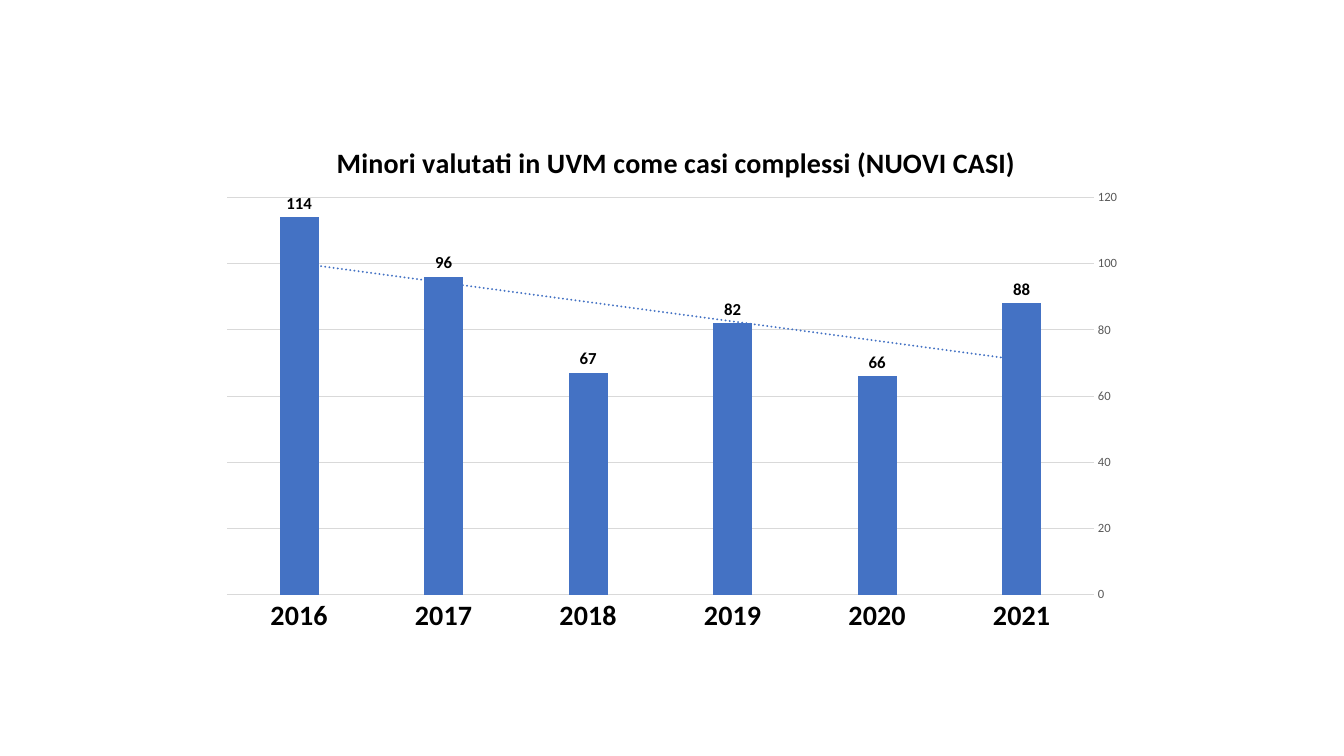
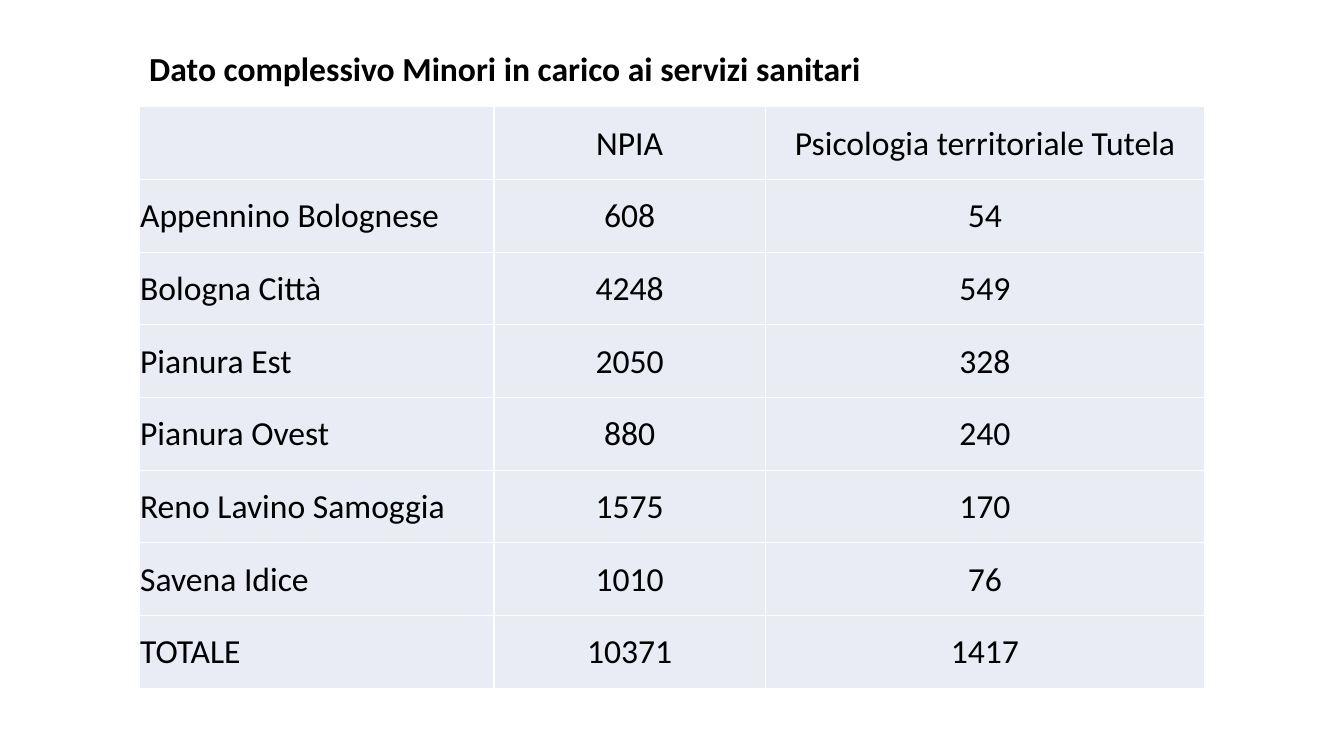
from dataclasses import dataclass
from typing import Any, NamedTuple

import pptx
import pptx.chart.data
import pptx.dml.color
import pptx.enum.chart
import pptx.enum.text
import pptx.oxml
import pptx.oxml.ns
import pptx.util
from pptx.dml.color import RGBColor
from pptx.util import Inches

FONT_NAME = "Calibri"
BLACK = RGBColor(0x00, 0x00, 0x00)
WHITE = RGBColor(0xFF, 0xFF, 0xFF)
GRAY = RGBColor(0x59, 0x59, 0x59)
LIGHT_GRAY = RGBColor(0xD9, 0xD9, 0xD9)
BLUE = RGBColor(0x44, 0x72, 0xC4)
PALE_BLUE = RGBColor(0xE9, 0xEB, 0xF5)

TITLE_ONLY_LAYOUT = 5
BLANK_LAYOUT = 6


class Box(NamedTuple):
    left: float
    top: float
    width: float
    height: float

    def lengths(self) -> list[int]:
        return [Inches(value) for value in self]


@dataclass(frozen=True)
class TextStyle:
    size: float
    bold: bool = False
    color: RGBColor = BLACK


class DistrictRow(NamedTuple):
    district: str
    npia: str
    psychology: str


CHART_BOX = Box(2.07, 1.12, 9.2, 5.27)
CHART_TITLE_BOX = Box(1.22, 0.25, 6.76, 0.34)
PLOT_BOX = Box(0.18, 0.84, 8.6, 3.94)
CHART_TITLE = "Minori valutati in UVM come casi complessi (NUOVI CASI)"
NEW_CASES = {"2021": 88, "2020": 66, "2019": 82, "2018": 67, "2017": 96, "2016": 114}

TABLE_TITLE_BOX = Box(1.38, 0.43, 7.54, 0.5)
TABLE_BOX = Box(1.38, 1.06, 10.57, 5.77)
COLUMN_WIDTHS = (3.52, 2.69, 4.36)
TABLE_TITLE = "Dato complessivo Minori in carico ai servizi sanitari"
DISTRICT_ROWS = (
    DistrictRow("", "NPIA", "Psicologia territoriale Tutela"),
    DistrictRow("Appennino Bolognese", "608", "54"),
    DistrictRow("Bologna Città", "4248", "549"),
    DistrictRow("Pianura Est", "2050", "328"),
    DistrictRow("Pianura Ovest", "880", "240"),
    DistrictRow("Reno Lavino Samoggia", "1575", "170"),
    DistrictRow("Savena Idice", "1010", "76"),
    DistrictRow("TOTALE", "10371", "1417"),
)

CHART_TITLE_STYLE = TextStyle(20, bold=True)
CATEGORY_STYLE = TextStyle(20, bold=True)
VALUE_STYLE = TextStyle(9, color=GRAY)
LABEL_STYLE = TextStyle(12, bold=True)
SLIDE_TITLE_STYLE = TextStyle(24, bold=True)
CELL_STYLE = TextStyle(24)


def set_attributes(target: Any, values: dict[str, Any]) -> None:
    for name, value in values.items():
        setattr(target, name, value)


def format_font(font: Any, style: TextStyle) -> None:
    set_attributes(
        font,
        {"name": FONT_NAME, "size": pptx.util.Pt(style.size), "bold": style.bold},
    )
    font.color.rgb = style.color


def format_line(line: Any, color: RGBColor, width: float) -> None:
    line.color.rgb = color
    line.width = pptx.util.Pt(width)


def set_chart_layout(element: Any, box: Box, index: int, inner: bool = False) -> None:
    """Place a chart part at a box given in inches from the chart's corner."""
    for layout in element.findall(pptx.oxml.ns.qn("c:layout")):
        element.remove(layout)
    target = '<c:layoutTarget val="inner"/>' if inner else ""
    values = {"x": box.left / CHART_BOX.width, "y": box.top / CHART_BOX.height}
    if inner:
        values["w"] = box.width / CHART_BOX.width
        values["h"] = box.height / CHART_BOX.height
    modes = "".join(f'<c:{name}Mode val="edge"/>' for name in "xy")
    sizes = "".join(f'<c:{name} val="{value:.4f}"/>' for name, value in values.items())
    layout_xml = (
        f'<c:layout {pptx.oxml.ns.nsdecls("c")}><c:manualLayout>'
        f"{target}{modes}{sizes}</c:manualLayout></c:layout>"
    )
    element.insert(index, pptx.oxml.parse_xml(layout_xml))


def add_trend_line(chart: Any) -> None:
    trend_line = pptx.oxml.parse_xml(
        f'<c:trendline {pptx.oxml.ns.nsdecls("c", "a")}><c:spPr>'
        f'<a:ln w="{pptx.util.Pt(1.5)}" cap="rnd"><a:solidFill><a:srgbClr val="{BLUE}"/>'
        '</a:solidFill><a:prstDash val="sysDot"/></a:ln></c:spPr>'
        '<c:trendlineType val="linear"/><c:dispRSqr val="0"/><c:dispEq val="0"/>'
        "</c:trendline>"
    )
    chart.element.find(".//" + pptx.oxml.ns.qn("c:cat")).addprevious(trend_line)


def format_axes(chart: Any) -> None:
    for axis, style in (
        (chart.category_axis, CATEGORY_STYLE),
        (chart.value_axis, VALUE_STYLE),
    ):
        axis.major_tick_mark = pptx.enum.chart.XL_TICK_MARK.NONE
        axis.minor_tick_mark = pptx.enum.chart.XL_TICK_MARK.NONE
        format_font(axis.tick_labels.font, style)
    chart.category_axis.reverse_order = True
    format_line(chart.category_axis.format.line, LIGHT_GRAY, 0.75)
    set_attributes(
        chart.value_axis,
        {
            "minimum_scale": 0,
            "maximum_scale": 120,
            "major_unit": 20,
            "has_major_gridlines": True,
        },
    )
    chart.value_axis.format.line.fill.background()
    format_line(chart.value_axis.major_gridlines.format.line, LIGHT_GRAY, 0.75)


def add_new_cases_chart(slide: Any) -> None:
    chart_data = pptx.chart.data.CategoryChartData()
    chart_data.categories = list(NEW_CASES)
    chart_data.add_series("Series 1", list(NEW_CASES.values()))
    chart = slide.shapes.add_chart(
        pptx.enum.chart.XL_CHART_TYPE.COLUMN_CLUSTERED, *CHART_BOX.lengths(), chart_data
    ).chart
    format_font(chart.font, TextStyle(10))
    chart.has_legend = False

    title_frame = chart.chart_title.text_frame
    title_frame.text = CHART_TITLE
    format_font(title_frame.paragraphs[0].runs[0].font, CHART_TITLE_STYLE)
    set_chart_layout(chart.element.find(".//" + pptx.oxml.ns.qn("c:title")), CHART_TITLE_BOX, 1)
    plot_area = chart.element.find(".//" + pptx.oxml.ns.qn("c:plotArea"))
    set_chart_layout(plot_area, PLOT_BOX, 0, inner=True)

    format_axes(chart)
    plot = chart.plots[0]
    set_attributes(plot, {"gap_width": 269, "vary_by_categories": False})
    series = plot.series[0]
    series.format.fill.solid()
    series.format.fill.fore_color.rgb = BLUE
    labels = series.data_labels
    set_attributes(
        labels,
        {
            "show_value": True,
            "position": pptx.enum.chart.XL_LABEL_POSITION.OUTSIDE_END,
        },
    )
    format_font(labels.font, LABEL_STYLE)
    add_trend_line(chart)


def add_slide_title(slide: Any, text: str, box: Box) -> None:
    title = slide.shapes.title
    set_attributes(title, dict(zip(box._fields, box.lengths())))
    set_attributes(
        title.text_frame,
        {
            "text": text,
            "word_wrap": True,
            "auto_size": pptx.enum.text.MSO_AUTO_SIZE.SHAPE_TO_FIT_TEXT,
            "vertical_anchor": pptx.enum.text.MSO_ANCHOR.TOP,
        },
    )
    paragraph = title.text_frame.paragraphs[0]
    paragraph.alignment = pptx.enum.text.PP_ALIGN.LEFT
    format_font(paragraph.runs[0].font, SLIDE_TITLE_STYLE)


def add_cell_borders(cell: Any) -> None:
    properties = cell._tc.get_or_add_tcPr()
    for side in "LRTB":
        border = pptx.oxml.parse_xml(
            f'<a:ln{side} {pptx.oxml.ns.nsdecls("a")} w="{pptx.util.Pt(1)}">'
            f'<a:solidFill><a:srgbClr val="{WHITE}"/></a:solidFill></a:ln{side}>'
        )
        properties.append(border)


def fill_cell(cell: Any, text: str, alignment: Any) -> None:
    add_cell_borders(cell)
    cell.fill.solid()
    cell.fill.fore_color.rgb = PALE_BLUE
    set_attributes(
        cell,
        {
            "text": text,
            "vertical_anchor": pptx.enum.text.MSO_ANCHOR.MIDDLE,
            "margin_left": Inches(0.01),
            "margin_top": Inches(0.01),
            "margin_right": Inches(0.01),
            "margin_bottom": 0,
        },
    )
    paragraph = cell.text_frame.paragraphs[0]
    paragraph.alignment = alignment
    format_font(paragraph.font, CELL_STYLE)
    for run in paragraph.runs:
        format_font(run.font, CELL_STYLE)


def add_district_table(slide: Any) -> None:
    table = slide.shapes.add_table(
        len(DISTRICT_ROWS), len(COLUMN_WIDTHS), *TABLE_BOX.lengths()
    ).table
    set_attributes(table, {"first_row": False, "horz_banding": False})
    for column, width in zip(table.columns, COLUMN_WIDTHS):
        column.width = Inches(width)
    for row, district_row in zip(table.rows, DISTRICT_ROWS):
        row.height = Inches(TABLE_BOX.height / len(DISTRICT_ROWS))
        for index, (cell, text) in enumerate(zip(row.cells, district_row)):
            alignments = pptx.enum.text.PP_ALIGN
            fill_cell(cell, text, alignments.CENTER if index else alignments.LEFT)


def main() -> None:
    presentation = pptx.Presentation()
    presentation.slide_width = Inches(13.33)
    presentation.slide_height = Inches(7.5)
    layouts = presentation.slide_layouts

    add_new_cases_chart(presentation.slides.add_slide(layouts[BLANK_LAYOUT]))

    table_slide = presentation.slides.add_slide(layouts[TITLE_ONLY_LAYOUT])
    add_district_table(table_slide)
    add_slide_title(table_slide, TABLE_TITLE, TABLE_TITLE_BOX)

    presentation.save("out.pptx")


if __name__ == "__main__":
    main()
